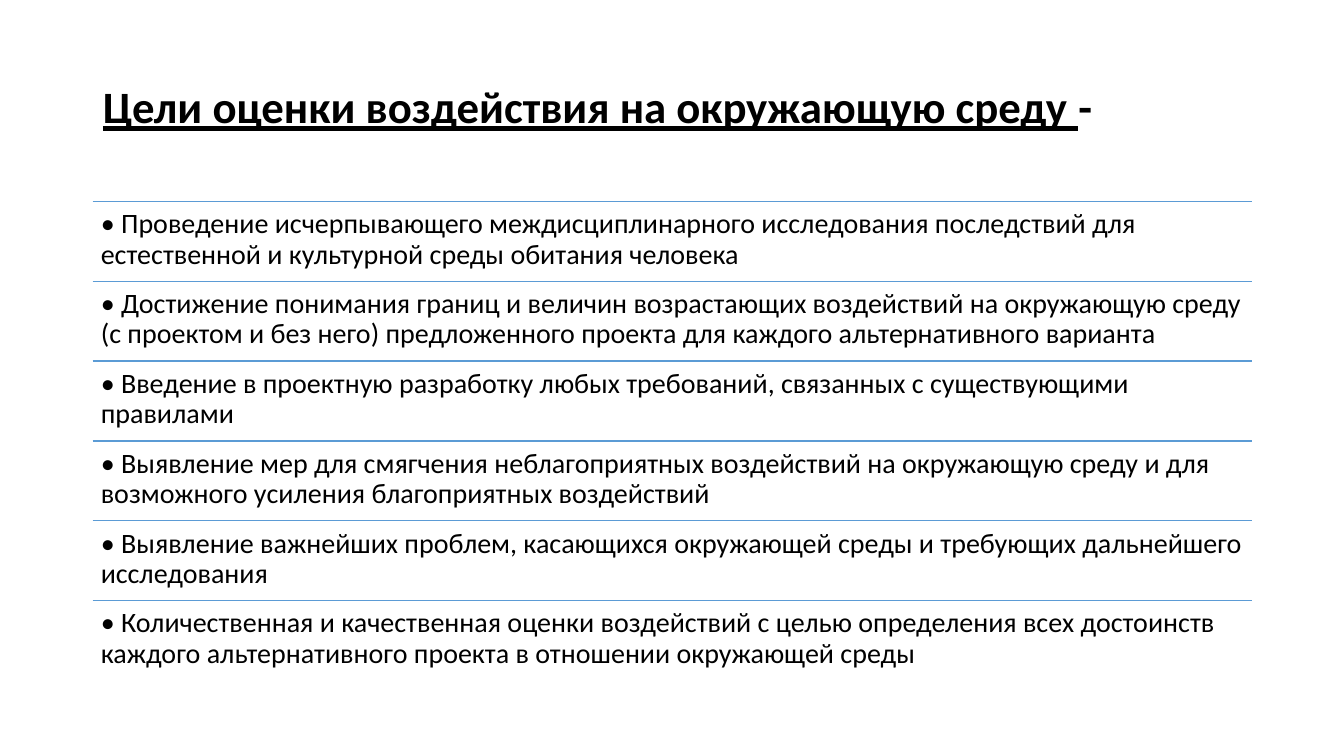
import pptx
import pptx.dml.color
import pptx.enum.shapes
import pptx.enum.text
import pptx.oxml.ns
import pptx.util
from lxml import etree

Inches = pptx.util.Inches
Pt = pptx.util.Pt

TITLE_SPANS = [
    ("Цели оценки воздействия на окружающую среду ", True),
    ("-", False),
]
GOALS = [
    "Проведение исчерпывающего междисциплинарного исследования последствий для "
    "естественной и культурной среды обитания человека",
    "Достижение понимания границ и величин возрастающих воздействий на окружающую среду "
    "(с проектом и без него) предложенного проекта для каждого альтернативного варианта",
    "Введение в проектную разработку любых требований, связанных с существующими правилами",
    "Выявление мер для смягчения неблагоприятных воздействий на окружающую среду и для "
    "возможного усиления благоприятных воздействий",
    "Выявление важнейших проблем, касающихся окружающей среды и требующих дальнейшего "
    "исследования",
    "Количественная и качественная оценки воздействий с целью определения всех достоинств "
    "каждого альтернативного проекта в отношении окружающей среды",
]
TITLE_FORMAT = {"name": "Calibri", "size": Pt(32), "bold": True}
GOAL_FORMAT = {"name": "Calibri", "size": Pt(20)}
MARGIN = Inches(0.08)
GOAL_FRAME = {
    "word_wrap": True,
    "vertical_anchor": pptx.enum.text.MSO_ANCHOR.TOP,
    "margin_left": MARGIN,
    "margin_top": MARGIN,
    "margin_right": MARGIN,
    "margin_bottom": MARGIN,
}
TITLE_FRAME = {
    "word_wrap": True,
    "vertical_anchor": pptx.enum.text.MSO_ANCHOR.MIDDLE,
    "auto_size": pptx.enum.text.MSO_AUTO_SIZE.NONE,
}
PARA_FORMAT = {"alignment": pptx.enum.text.PP_ALIGN.LEFT, "line_spacing": 0.9}


def paint(color_format, hex_color):
    color_format.rgb = pptx.dml.color.RGBColor.from_string(hex_color)


def set_all(target, values):
    for name, value in values.items():
        setattr(target, name, value)


def add_span(para, text, font_format):
    span = para.add_run()
    span.text = text
    set_all(span.font, font_format)
    paint(span.font.color, "000000")


def add_title(page, left, top, width, height):
    title = page.shapes.title
    set_all(title, {"left": left, "top": top, "width": width, "height": height})
    set_all(title.text_frame, TITLE_FRAME)
    para = title.text_frame.paragraphs[0]
    set_all(para, PARA_FORMAT)
    for text, underlined in TITLE_SPANS:
        add_span(para, text, TITLE_FORMAT | {"underline": underlined})


def add_rule(page, left, top, width):
    rule = page.shapes.add_connector(
        pptx.enum.shapes.MSO_CONNECTOR.STRAIGHT, left, top, left + width, top)
    rule.line.width = Pt(1)
    paint(rule.line.color, "5B9BD5")
    # An empty effect list keeps the theme shadow off
    etree.SubElement(rule.line._get_or_add_ln().getparent(), pptx.oxml.ns.qn("a:effectLst"))


def add_goals(page, left, top, width, height):
    row_height = height // len(GOALS)
    for index, goal in enumerate(GOALS):
        row_top = top + index * row_height
        add_rule(page, left, row_top, width)
        box = page.shapes.add_textbox(left, row_top, width, row_height)
        set_all(box.text_frame, GOAL_FRAME)
        para = box.text_frame.paragraphs[0]
        set_all(para, PARA_FORMAT)
        add_span(para, "• " + goal, GOAL_FORMAT)


def main():
    deck = pptx.Presentation()
    deck.slide_width, deck.slide_height = Inches(13.33), Inches(7.5)
    page = deck.slides.add_slide(deck.slide_layouts.get_by_name("Title Only"))
    page.background.fill.solid()
    paint(page.background.fill.fore_color, "FFFFFF")

    # Heading above, ruled list of goals below
    add_title(page, Inches(0.92), Inches(0.18), Inches(11.96), Inches(1.81))
    add_goals(page, Inches(0.92), Inches(2), Inches(11.5), Inches(4.75))
    deck.save("out.pptx")


if __name__ == "__main__":
    main()
